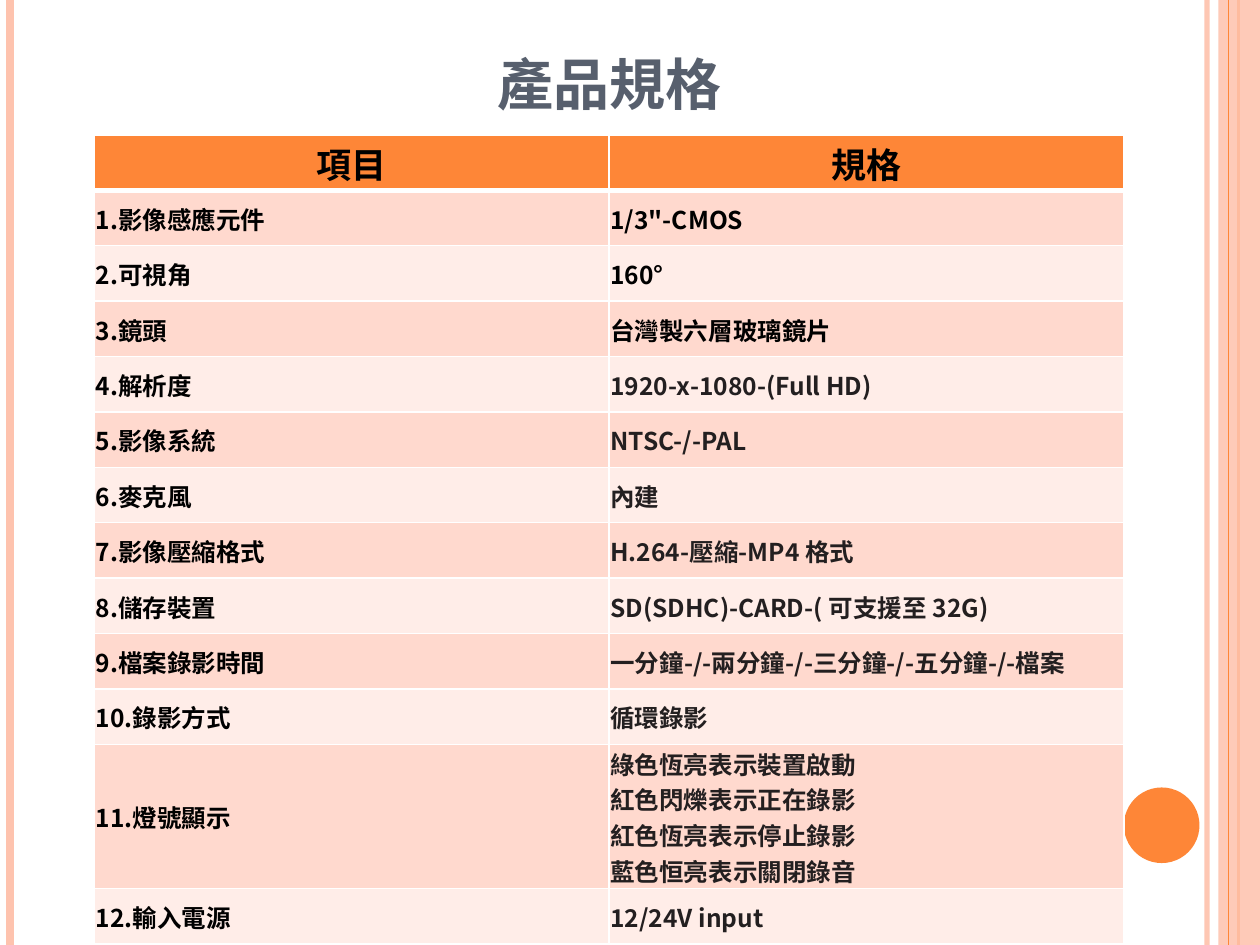
import dataclasses

import lxml.etree
import pptx
import pptx.dml.color
import pptx.enum.shapes
import pptx.enum.text
import pptx.oxml.ns
import pptx.util

Inches, Pt = pptx.util.Inches, pptx.util.Pt
RGB = pptx.dml.color.RGBColor.from_string
qn = pptx.oxml.ns.qn
MIDDLE = pptx.enum.text.MSO_ANCHOR.MIDDLE
CENTER = pptx.enum.text.PP_ALIGN.CENTER
LEFT = pptx.enum.text.PP_ALIGN.LEFT


@dataclasses.dataclass(frozen=True)
class Theme:
    font: str = "Noto Sans CJK SC"
    accent: str = "FE8637"
    soft: str = "FEC3AE"
    bands: tuple = ("FFD9CE", "FFEDE8")
    border: str = "FFFFFF"
    heading: str = "575F6D"
    black: str = "000000"
    ink: str = "231F20"
    title_size: int = 40
    header_size: int = 20
    body_size: int = 14


class SlideBuilder:
    def __init__(self, slide, theme):
        self.slide, self.theme = slide, theme

    def set_alpha(self, color_parent, percent):
        """Make the solid colour found under an element partly transparent."""
        color = color_parent.find(".//" + qn("a:srgbClr"))
        lxml.etree.SubElement(color, qn("a:alpha"), val=str(percent * 1000))

    def style_text(self, p, size, color, align=LEFT):
        p.alignment = align
        for r in p.runs:
            r.font.name, r.font.size, r.font.bold = self.theme.font, Pt(size), True
            r.font.color.rgb = RGB(color)
            lxml.etree.SubElement(r.font._element, qn("a:ea"), typeface=self.theme.font)

    def title(self, text, left, top, width, height):
        sp = self.slide.shapes.title
        sp.left, sp.top, sp.width, sp.height = map(Inches, (left, top, width, height))
        tf = sp.text_frame
        tf.text = text
        tf.auto_size = pptx.enum.text.MSO_AUTO_SIZE.NONE
        tf.vertical_anchor = pptx.enum.text.MSO_ANCHOR.BOTTOM
        p = tf.paragraphs[0]
        self.style_text(p, self.theme.title_size, self.theme.heading, CENTER)
        p.runs[0].font._element.set("cap", "small")

    def vertical_line(self, x, color, width, alpha=100):
        line = self.slide.shapes.add_connector(
            pptx.enum.shapes.MSO_CONNECTOR.STRAIGHT,
            Inches(x), 0, Inches(x), Inches(7.5))
        line.line.color.rgb, line.line.width = RGB(color), Pt(width)
        sp_pr = line._element.spPr
        if alpha < 100:
            self.set_alpha(sp_pr, alpha)
        lxml.etree.SubElement(sp_pr, qn("a:effectLst"))

    def shape(self, kind, left, top, width, height, color, alpha=100):
        sp = self.slide.shapes.add_shape(kind, *map(Inches, (left, top, width, height)))
        sp.shadow.inherit = False
        sp.fill.solid()
        sp.fill.fore_color.rgb = RGB(color)
        sp.line.fill.background()
        if alpha < 100:
            self.set_alpha(sp._element.spPr, alpha)

    def borders(self, cell, top, bottom):
        """Draw the four cell borders; they come before the fill in the XML."""
        tc_pr = cell._tc.get_or_add_tcPr()
        widths = {"a:lnL": 1, "a:lnR": 1, "a:lnT": top, "a:lnB": bottom}
        for i, (tag, width) in enumerate(widths.items()):
            ln = lxml.etree.Element(qn(tag), w=str(Pt(width)))
            fill = lxml.etree.SubElement(ln, qn("a:solidFill"))
            lxml.etree.SubElement(fill, qn("a:srgbClr"), val=self.theme.border)
            tc_pr.insert(i, ln)

    def cell(self, cell, text, fill, size, color, align):
        cell.margin_left = cell.margin_top = cell.margin_right = Inches(0.01)
        cell.margin_bottom = 0
        cell.vertical_anchor = MIDDLE
        cell.fill.solid()
        cell.fill.fore_color.rgb = RGB(fill)
        p = cell.text_frame.paragraphs[0]
        p.text = text
        self.style_text(p, size, color, align)

    def table(self, rows, left, top, width, heights):
        th = self.theme
        table = self.slide.shapes.add_table(
            len(rows), len(rows[0]), Inches(left), Inches(top),
            Inches(width), Inches(sum(heights))).table
        for i, (row, height) in enumerate(zip(rows, heights)):
            table.rows[i].height = Inches(height)
            for j, text in enumerate(row):
                cell = table.cell(i, j)
                if i == 0:
                    self.cell(cell, text, th.accent, th.header_size, th.black, CENTER)
                else:
                    # The values from the fourth item on use the softer ink
                    color = th.ink if j == 1 and i > 3 else th.black
                    self.cell(cell, text, th.bands[(i - 1) % 2], th.body_size, color, LEFT)
                self.borders(cell, 3 if i == 1 else 1, 3 if i == 0 else 1)


SPECS = [
    ("項目", "規格"),
    ("1.影像感應元件", '1/3"-CMOS'),
    ("2.可視角", "160°"),
    ("3.鏡頭", "台灣製六層玻璃鏡片"),
    ("4.解析度", "1920-x-1080-(Full HD)"),
    ("5.影像系統", "NTSC-/-PAL"),
    ("6.麥克風", "內建"),
    ("7.影像壓縮格式", "H.264-壓縮-MP4 格式"),
    ("8.儲存裝置", "SD(SDHC)-CARD-( 可支援至 32G)"),
    ("9.檔案錄影時間", "一分鐘-/-兩分鐘-/-三分鐘-/-五分鐘-/-檔案"),
    ("10.錄影方式", "循環錄影"),
    ("11.燈號顯示", "綠色恆亮表示裝置啟動\n紅色閃爍表示正在錄影\n"
                "紅色恆亮表示停止錄影\n藍色恒亮表示關閉錄音"),
    ("12.輸入電源", "12/24V input"),
]


def main():
    prs = pptx.Presentation()
    prs.slide_width, prs.slide_height = Inches(10), Inches(7.5)
    theme = Theme()
    s = SlideBuilder(prs.slides.add_slide(prs.slide_layouts[5]), theme)
    shapes = pptx.enum.shapes.MSO_SHAPE

    # Side stripes and dot
    s.vertical_line(9.58, theme.soft, 3, alpha=93)
    s.vertical_line(0.08, theme.soft, 4.5)
    s.vertical_line(9.83, theme.accent, 1.5)
    s.shape(shapes.RECTANGLE, 9.67, 0, 0.33, 7.5, theme.soft, alpha=87)
    s.vertical_line(9.75, theme.accent, 0.75)
    s.shape(shapes.OVAL, 8.92, 6.25, 0.6, 0.6, theme.accent)

    # Title
    s.title("產品規格", 0.75, 0.21, 8.17, 0.79)

    # Specification table, with a taller row for the multi-line value
    heights = [1.02 if "\n" in value else 0.44 for _, value in SPECS]
    s.table(SPECS, 0.75, 1.07, 8.17, heights)

    prs.save("out.pptx")


if __name__ == "__main__":
    main()
